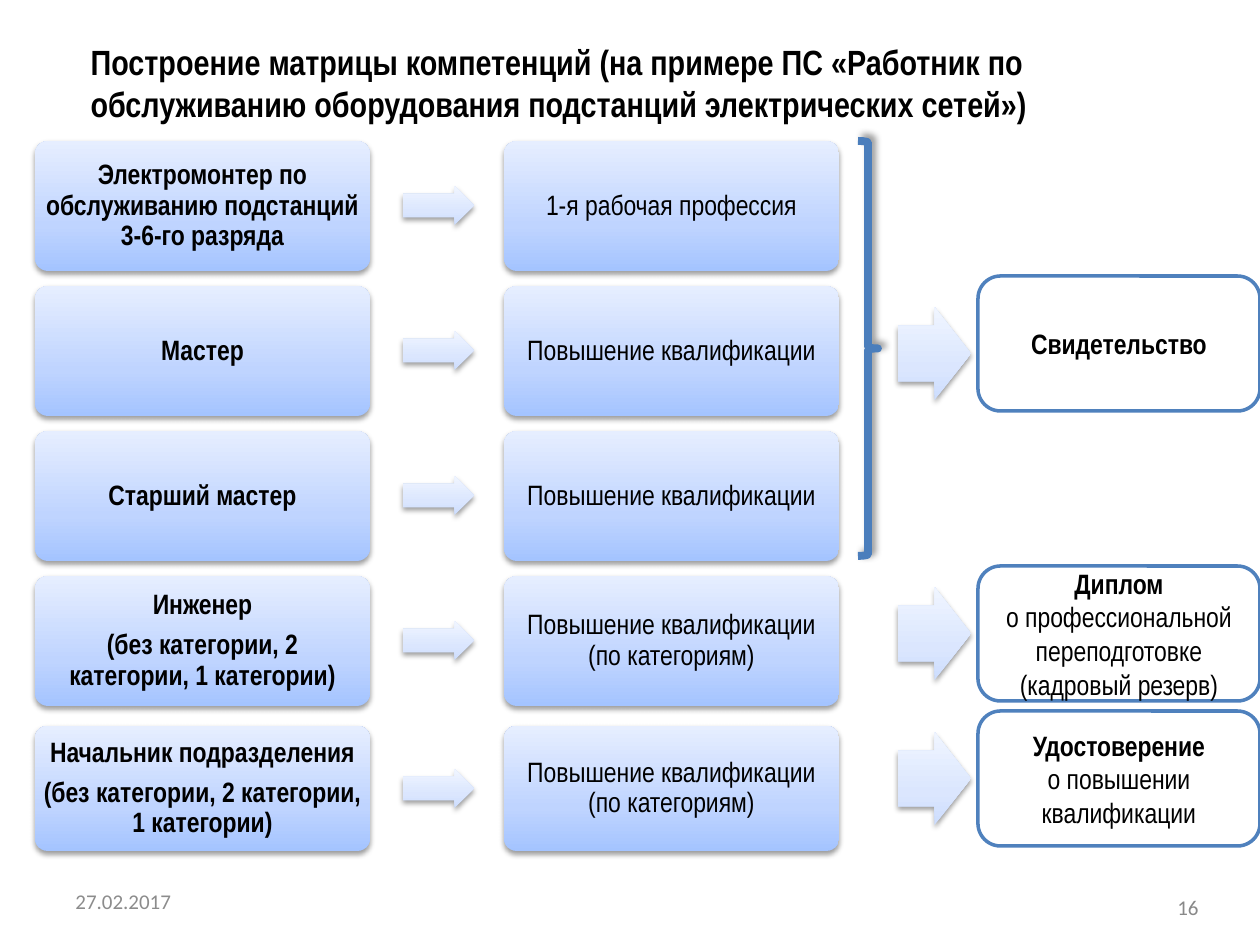
"""Build the competence matrix slide for substation maintenance staff."""
from dataclasses import dataclass
from typing import NamedTuple

from lxml import etree
from pptx import Presentation
from pptx.dml.color import RGBColor
from pptx.enum.shapes import MSO_SHAPE
from pptx.enum.text import MSO_ANCHOR, MSO_AUTO_SIZE, PP_ALIGN
from pptx.oxml.ns import qn
from pptx.shapes.autoshape import Shape
from pptx.slide import Slide
from pptx.text.text import TextFrame
from pptx.util import Emu, Pt

ROUNDED, ARROW, BRACE = MSO_SHAPE.ROUNDED_RECTANGLE, MSO_SHAPE.RIGHT_ARROW, MSO_SHAPE.RIGHT_BRACE
LEFT, CENTER, RIGHT = PP_ALIGN.LEFT, PP_ALIGN.CENTER, PP_ALIGN.RIGHT
MIDDLE = MSO_ANCHOR.MIDDLE
NO_AUTOFIT = MSO_AUTO_SIZE.NONE
TITLE_ONLY = 5
PX_PER_INCH = 126
SLIDE_WIDTH, SLIDE_HEIGHT = 1260, 945
CARD_WIDTH, CARD_INSET = 335, 5
ROLE_LEFT, STEP_LEFT, TRAINING_LEFT = 35, 403, 504
STEP_WIDTH, STEP_HEIGHT = 71, 39
ROW_TOP, ROW_PITCH, ROW_HEIGHT = 141, 145, 130
OUTCOME_LEFT, OUTCOME_WIDTH, OUTCOME_HEIGHT = 978, 282, 135
RESULT_LEFT, RESULT_WIDTH, RESULT_HEIGHT = 898, 73, 93


class Span(NamedTuple):
    """One paragraph of text and its weight."""
    text: str
    bold: bool = False


class Area(NamedTuple):
    """A rectangle in px."""
    left: int
    top: int
    width: int
    height: int


class Shadow(NamedTuple):
    """An outer shadow: opacity in percent, lengths in points, angle in degrees."""
    opacity: int
    blur: float
    distance: float
    angle: int


class Stop(NamedTuple):
    """A gradient stop, its position in percent."""
    position: int
    color: str


@dataclass(frozen=True)
class Row:
    """A job role, the training it needs and the place of its row."""
    role: list[Span]
    training: str
    top: int
    height: int = ROW_HEIGHT


@dataclass(frozen=True)
class Outcome:
    """A document awarded, with the tops of its box and of its arrow."""
    spans: list[Span]
    top: int
    arrow_top: int


@dataclass(frozen=True)
class Theme:
    """Colours, fonts, type sizes and effects."""
    ink: str = "000000"
    paper: str = "FFFFFF"
    outline: str = "4F81BD"
    brace: str = "4B7EBC"
    number: str = "898989"
    date: str = "8C8C8C"
    font: str = "Arial Narrow"
    footer_font: str = "Calibri"
    title_size: int = 20
    body_size: int = 16
    footer_size: int = 12
    card: tuple[Stop, ...] = (Stop(0, "A4C4FF"), Stop(35, "BFD4FF"), Stop(100, "E6EEFF"))
    arrow: tuple[Stop, ...] = (Stop(0, "CDDDFE"), Stop(35, "DBE6FE"), Stop(100, "F0F5FF"))
    soft: Shadow = Shadow(38, 3.1, 1.6, 90)
    lifted: Shadow = Shadow(40, 4, 3, 315)


THEME = Theme()
TITLE = ("Построение матрицы компетенций (на примере ПС «Работник по "
         "обслуживанию оборудования подстанций электрических сетей»)")
GRADES = Span("(без категории, 2 категории, 1 категории)", True)
UPGRADE = "Повышение квалификации"
UPGRADE_BY_GRADE = f"{UPGRADE} (по категориям)"
CONTENT = [
    ([Span("Электромонтер по обслуживанию подстанций 3-6-го разряда", True)], "1-я рабочая профессия"),
    ([Span("Мастер", True)], UPGRADE),
    ([Span("Старший мастер", True)], UPGRADE),
    ([Span("Инженер", True), GRADES], UPGRADE_BY_GRADE),
]
ROWS = [Row(role, training, ROW_TOP + index * ROW_PITCH)
        for index, (role, training) in enumerate(CONTENT)]
ROWS.append(Row([Span("Начальник подразделения", True), GRADES], UPGRADE_BY_GRADE, 726, 125))
OUTCOMES = [
    Outcome([Span("Свидетельство", True)], 276, 307),
    Outcome([Span("Диплом", True),
             Span("о профессиональной переподготовке (кадровый резерв)")], 566, 587),
    Outcome([Span("Удостоверение", True), Span("о повышении квалификации")], 711, 732),
]


def px(length: int) -> Emu:
    """Turn px into EMU."""
    return Emu(round(length * 914400 / PX_PER_INCH))


def place(area: Area) -> tuple[Emu, ...]:
    """Turn an area into EMU."""
    return tuple(px(length) for length in area)


def write(frame: TextFrame, spans: list[Span], size: int, align: PP_ALIGN,
          color: str = THEME.ink, font: str = THEME.font,
          spacing: float = 1.0, gap: float = 0) -> None:
    """Write one paragraph per span, centred vertically."""
    frame.word_wrap = True
    frame.auto_size = NO_AUTOFIT
    frame.vertical_anchor = MIDDLE
    for index, span in enumerate(spans):
        para = frame.add_paragraph() if index else frame.paragraphs[0]
        para.alignment = align
        para.line_spacing = spacing
        para.space_before = Pt(gap if index else 0)
        run = para.add_run()
        run.text = span.text
        run.font.name, run.font.size, run.font.bold = font, Pt(size), span.bold
        run.font.color.rgb = RGBColor.from_string(color)


def add_color(parent: etree._Element, color: str) -> etree._Element:
    """Append an RGB colour element."""
    return etree.SubElement(parent, qn("a:srgbClr"), val=color)


def fill_gradient(shape: Shape, stops: tuple[Stop, ...]) -> None:
    """Fill a shape from bottom to top and drop its line."""
    shape.fill.gradient()
    shape.fill.gradient_angle = 90
    stop_list = shape.element.spPr.find(f".//{qn('a:gsLst')}")
    for old in list(stop_list):
        stop_list.remove(old)
    for stop in stops:
        add_color(etree.SubElement(stop_list, qn("a:gs"), pos=str(stop.position * 1000)), stop.color)
    shape.line.fill.background()


def cast(shape: Shape, shadow: Shadow) -> None:
    """Give a shape an outer shadow."""
    effects = shape.element.spPr.find(qn("a:effectLst"))
    outer = etree.SubElement(effects, qn("a:outerShdw"), blurRad=str(Pt(shadow.blur)),
                             dist=str(Pt(shadow.distance)), dir=str(shadow.angle * 60000),
                             rotWithShape="0")
    etree.SubElement(add_color(outer, THEME.ink), qn("a:alpha"), val=str(shadow.opacity * 1000))


def add_shape(slide: Slide, kind: MSO_SHAPE, area: Area) -> Shape:
    """Add a preset shape without the default shadow."""
    shape = slide.shapes.add_shape(kind, *place(area))
    shape.shadow.inherit = False
    return shape


def add_card(slide: Slide, area: Area, spans: list[Span]) -> None:
    """Add a shaded card with text."""
    card = add_shape(slide, ROUNDED, area)
    card.adjustments[0] = 0.1
    fill_gradient(card, THEME.card)
    cast(card, THEME.soft)
    frame = card.text_frame
    frame.margin_left = frame.margin_right = px(CARD_INSET)
    frame.margin_top = frame.margin_bottom = px(CARD_INSET)
    write(frame, spans, THEME.body_size, CENTER, spacing=0.9, gap=5.6)


def add_arrow(slide: Slide, area: Area) -> None:
    """Add a shaded block arrow."""
    arrow = add_shape(slide, ARROW, area)
    arrow.adjustments[0], arrow.adjustments[1] = 0.6, 0.5
    fill_gradient(arrow, THEME.arrow)
    cast(arrow, THEME.soft)


def add_row(slide: Slide, row: Row) -> None:
    """Add a role card, an arrow and a training card."""
    add_card(slide, Area(ROLE_LEFT, row.top, CARD_WIDTH, row.height), row.role)
    arrow_top = row.top + (row.height - STEP_HEIGHT) // 2
    add_arrow(slide, Area(STEP_LEFT, arrow_top, STEP_WIDTH, STEP_HEIGHT))
    add_card(slide, Area(TRAINING_LEFT, row.top, CARD_WIDTH, row.height), [Span(row.training)])


def add_outcome(slide: Slide, outcome: Outcome) -> None:
    """Add an arrow and the outlined box it leads to."""
    add_arrow(slide, Area(RESULT_LEFT, outcome.arrow_top, RESULT_WIDTH, RESULT_HEIGHT))
    box = add_shape(slide, ROUNDED, Area(OUTCOME_LEFT, outcome.top, OUTCOME_WIDTH, OUTCOME_HEIGHT))
    box.fill.solid()
    box.fill.fore_color.rgb = RGBColor.from_string(THEME.paper)
    box.line.color.rgb = RGBColor.from_string(THEME.outline)
    box.line.width = Pt(2)
    write(box.text_frame, outcome.spans, THEME.body_size, CENTER)


def add_brace(slide: Slide, area: Area) -> None:
    """Add the brace that joins the first rows."""
    brace = add_shape(slide, BRACE, area)
    brace.fill.background()
    brace.line.color.rgb = RGBColor.from_string(THEME.brace)
    brace.line.width = Pt(4.5)
    cast(brace, THEME.lifted)


def add_footer(slide: Slide, area: Area, text: str, align: PP_ALIGN, color: str) -> None:
    """Add a small footer text."""
    box = slide.shapes.add_textbox(*place(area))
    write(box.text_frame, [Span(text)], THEME.footer_size, align, color, THEME.footer_font)


def main() -> None:
    """Build and save the deck."""
    deck = Presentation()
    deck.slide_width, deck.slide_height = px(SLIDE_WIDTH), px(SLIDE_HEIGHT)
    slide = deck.slides.add_slide(deck.slide_layouts[TITLE_ONLY])
    title = slide.shapes.title
    title.left, title.top, title.width, title.height = place(Area(78, 44, 1134, 77))
    write(title.text_frame, [Span(TITLE, True)], THEME.title_size, LEFT)
    for row in ROWS:
        add_row(slide, row)
    add_brace(slide, Area(858, 141, 20, 415))
    for outcome in OUTCOMES:
        add_outcome(slide, outcome)
    add_footer(slide, Area(63, 876, 294, 50), "27.02.2017", LEFT, THEME.date)
    add_footer(slide, Area(917, 882, 294, 50), "16", RIGHT, THEME.number)
    deck.save("out.pptx")


if __name__ == "__main__":
    main()
